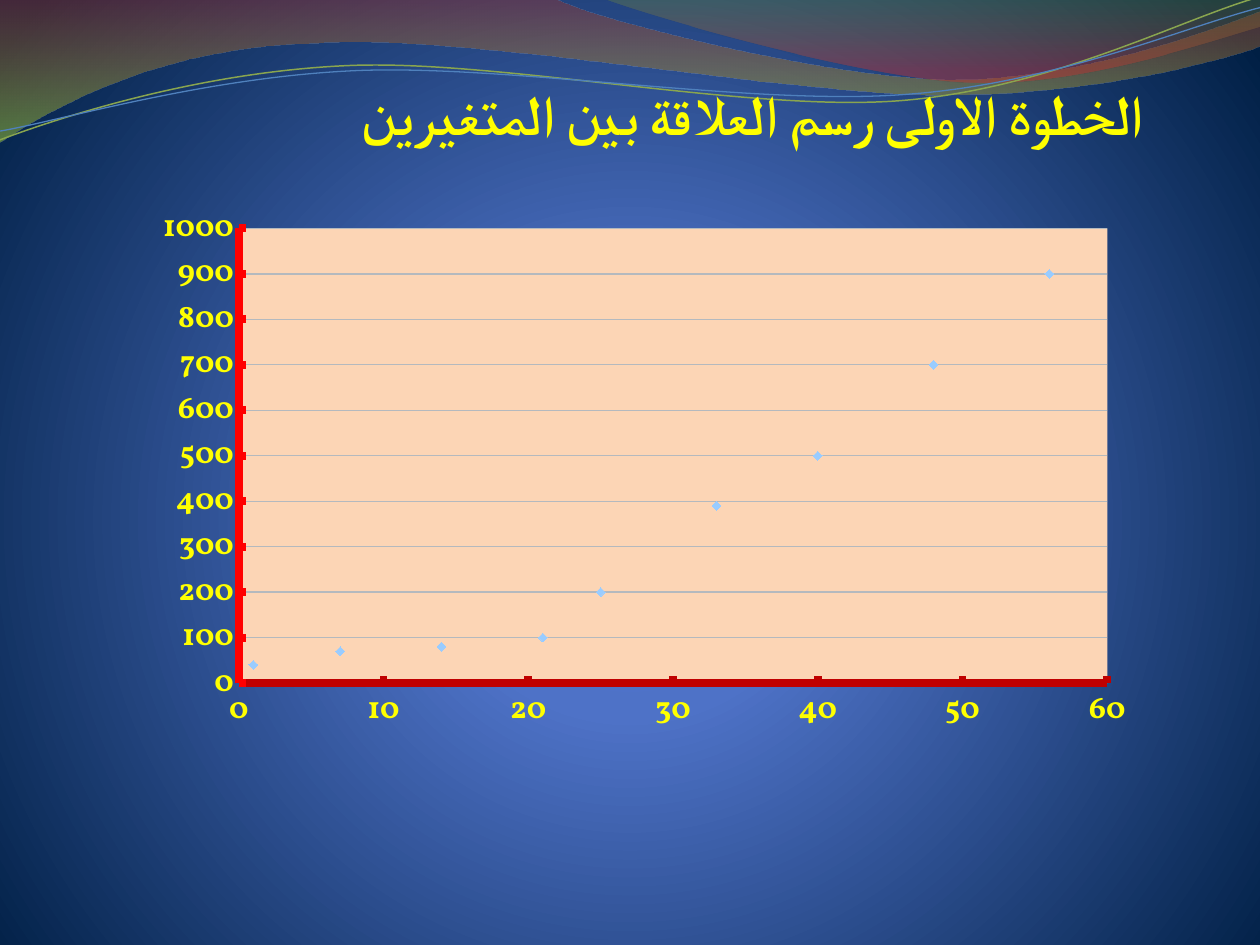
from dataclasses import dataclass
from math import cos, radians, sin

from pptx import Presentation
from pptx.chart.data import XyChartData
from pptx.dml.color import RGBColor
from pptx.enum.chart import XL_CHART_TYPE, XL_MARKER_STYLE, XL_TICK_MARK
from pptx.enum.text import MSO_ANCHOR, MSO_AUTO_SIZE, PP_ALIGN
from pptx.oxml import parse_xml
from pptx.oxml.ns import nsdecls
from pptx.util import Pt

PX = 9144
TILT = 357.3
SCATTER = XL_CHART_TYPE.XY_SCATTER
DIAMOND = XL_MARKER_STYLE.DIAMOND
INSIDE, NO_TICK = XL_TICK_MARK.INSIDE, XL_TICK_MARK.NONE
TOP, RIGHT, NO_FIT = MSO_ANCHOR.TOP, PP_ALIGN.RIGHT, MSO_AUTO_SIZE.NONE


@dataclass(frozen=True)
class Theme:
    font: str = "Vollkorn"
    head: int = 32
    label: int = 18
    text: str = "FFFF00"
    back: tuple = ((0, "4D75D6", 100), (25, "4E72C7", 100), (100, "001F44", 100))
    wide: tuple = ((0, "973330", 45), (100, "95C238", 55))
    small: tuple = ((0, "769537", 30), (80, "BE3330", 45))
    green: str = "89A54F"
    blue: str = "4F81BD"
    plot: str = "FCD5B5"
    grid: str = "B4B9BE"
    mark: str = "99CCFF"
    base: str = "C00000"
    side: str = "FF0000"


THEME = Theme()
CENTRE = '<a:path path="circle"><a:fillToRect l="10000" t="110000" r="10000" b="100000"/></a:path>'
DOWN = '<a:lin ang="5400000" scaled="1"/>'

BANDS = [
    (THEME.wide, [(0, 0), (440, -1), (476, 17, 664, 63, 758, 63),
                  (853, 63, 958, 26, 1000, 9), (1001, 36),
                  (983, 44, 870, 76, 746, 75), (622, 75, 382, 28, 257, 34),
                  (129, 36, 46, 83, -1, 113), (0, 0)]),
    (THEME.small, [(479, -1), (509, 11, 682, 62, 769, 65),
                   (856, 69, 961, 32, 1000, 21), (1000, 0), (479, -1)]),
]
LINES = [
    (THEME.green, 0.85, (499, 57), [(0, 111), (48, 93, 158, 57, 277, 52),
                                    (395, 47, 593, 89, 713, 80),
                                    (833, 71, 938, 15, 998, -2)]),
    (THEME.blue, 0.75, (499, 59), [(0, 104), (47, 96, 164, 61, 283, 56),
                                   (403, 51, 597, 84, 717, 75),
                                   (836, 67, 941, 21, 1000, 6)]),
]
POINTS = zip([1, 7, 14, 21, 25, 33, 40, 48, 56],
             [40, 70, 80, 100, 200, 390, 500, 700, 900])


def rgb(code):
    return RGBColor.from_string(code)


def emu(box):
    return [n * PX for n in box]


def blend(stops, tail):
    parts = "".join(
        f'<a:gs pos="{pos * 1000}"><a:srgbClr val="{code}">'
        f'<a:alpha val="{alpha * 1000}"/></a:srgbClr></a:gs>'
        for pos, code, alpha in stops)
    return parse_xml(f'<a:gradFill {nsdecls("a")} rotWithShape="1">'
                     f'<a:gsLst>{parts}</a:gsLst>{tail}</a:gradFill>')


def swap_fill(parent, stops, tail):
    old = parent.xpath("./a:solidFill")[0]
    parent.replace(old, blend(stops, tail))


def pairs(step):
    return list(zip(step[::2], step[1::2]))


def turn(route, hub, angle):
    c, s = cos(radians(angle)), sin(radians(angle))

    def spin(x, y):
        dx, dy = x - hub[0], y - hub[1]
        return hub[0] + dx * c - dy * s, hub[1] + dx * s + dy * c

    return [sum((spin(*dot) for dot in pairs(step)), ()) for step in route]


def draw(shapes, box, route, close):
    dots = [((box[0] + x) * PX, (box[1] + y) * PX)
            for step in route for x, y in pairs(step)]
    pen = shapes.build_freeform(*dots[0])
    pen.add_line_segments(dots[1:], close=close)
    shape = pen.convert_to_shape()
    shape.shadow.inherit = False
    nodes = iter(shape.element.xpath(".//a:lnTo"))
    for step in route[1:]:
        first = next(nodes)
        if len(step) == 6:
            curve = parse_xml(f'<a:cubicBezTo {nsdecls("a")}/>')
            first.addprevious(curve)
            for node in (first, next(nodes), next(nodes)):
                curve.append(node[0])
                node.getparent().remove(node)
    return shape


def add_back(slide):
    slide.background.fill.solid()
    swap_fill(slide.element.xpath(".//p:bgPr")[0], THEME.back, CENTRE)


def add_waves(slide, box):
    for stops, route in BANDS:
        band = draw(slide.shapes, box, route, True)
        band.line.fill.background()
        band.fill.solid()
        swap_fill(band.element.spPr, stops, DOWN)
    group = slide.shapes.add_group_shape()
    for code, width, hub, route in LINES:
        wave = draw(group.shapes, box, turn(route, hub, -TILT), False)
        wave.rotation = TILT
        wave.fill.background()
        wave.line.color.rgb = rgb(code)
        wave.line.width = Pt(width)


def add_title(slide, box, text):
    title = slide.shapes.title
    title.left, title.top, title.width, title.height = emu(box)
    title.element.getparent().append(title.element)
    frame = title.text_frame
    frame.text = text
    frame.word_wrap = True
    frame.auto_size = NO_FIT
    frame.vertical_anchor = TOP
    frame.margin_left, frame.margin_top, frame.margin_right, frame.margin_bottom = emu((0, 5, 9, 5))
    line = frame.paragraphs[0]
    line.alignment = RIGHT
    line.font.name = THEME.font
    line.font.size = Pt(THEME.head)
    line.font.bold = True
    line.font.color.rgb = rgb(THEME.text)
    style = title.element.xpath(".//a:pPr")[0]
    style.set("rtl", "1")
    style.insert(0, parse_xml(
        f'<a:spcBef {nsdecls("a")}><a:spcPct val="20000"/></a:spcBef>'))
    style.xpath(".//a:latin")[0].addnext(parse_xml(
        f'<a:cs {nsdecls("a")} typeface="{THEME.font}"/>'))


def style_axis(axis, code, top, unit):
    axis.minimum_scale, axis.maximum_scale, axis.major_unit = 0, top, unit
    axis.major_tick_mark, axis.minor_tick_mark = INSIDE, NO_TICK
    axis.format.line.color.rgb = rgb(code)
    axis.format.line.width = Pt(4.5)
    font = axis.tick_labels.font
    font.name, font.size, font.bold = THEME.font, Pt(THEME.label), True
    font.color.rgb = rgb(THEME.text)


def style_plot(chart):
    area = chart.element.xpath(".//c:plotArea")[0]
    for old in area.xpath("./c:layout"):
        area.remove(old)
    sizes = zip("xywh", (0.161, 0.051, 0.795, 0.788))
    parts = "".join(f'<c:{key} val="{size}"/>' for key, size in sizes)
    area.insert(0, parse_xml(
        f'<c:layout {nsdecls("c")}><c:manualLayout><c:layoutTarget val="inner"/>'
        f'<c:xMode val="edge"/><c:yMode val="edge"/>{parts}</c:manualLayout></c:layout>'))
    area.append(parse_xml(
        f'<c:spPr {nsdecls("c", "a")}><a:solidFill><a:srgbClr val="{THEME.plot}"/>'
        '</a:solidFill><a:ln><a:noFill/></a:ln></c:spPr>'))


def add_graph(slide, box):
    data = XyChartData()
    row = data.add_series("Series 1")
    for x, y in POINTS:
        row.add_data_point(x, y)
    chart = slide.shapes.add_chart(SCATTER, *emu(box), data).chart
    chart.has_legend = chart.has_title = False
    chart.font.name, chart.font.size = THEME.font, Pt(THEME.label)
    chart.plots[0].vary_by_categories = False
    style_axis(chart.category_axis, THEME.base, 60, 10)
    style_axis(chart.value_axis, THEME.side, 1000, 100)
    chart.category_axis.has_major_gridlines = False
    chart.value_axis.has_major_gridlines = True
    grid = chart.value_axis.major_gridlines.format.line
    grid.color.rgb, grid.width = rgb(THEME.grid), Pt(0.75)
    dots = chart.plots[0].series[0]
    dots.format.line.fill.background()
    dots.marker.style, dots.marker.size = DIAMOND, 5
    dots.marker.format.fill.solid()
    dots.marker.format.fill.fore_color.rgb = rgb(THEME.mark)
    dots.marker.format.line.fill.background()
    style_plot(chart)


def main():
    deck = Presentation()
    deck.slide_width, deck.slide_height = emu((1000, 750))
    slide = deck.slides.add_slide(deck.slide_layouts[5])
    add_back(slide)
    add_waves(slide, (0, 0, 1000, 114))
    add_title(slide, (58, 58, 859, 617), "الخطوة الاولى رسم العلاقة بين المتغيرين")
    add_graph(slide, (50, 158, 867, 458))
    deck.save("out.pptx")


if __name__ == "__main__":
    main()
